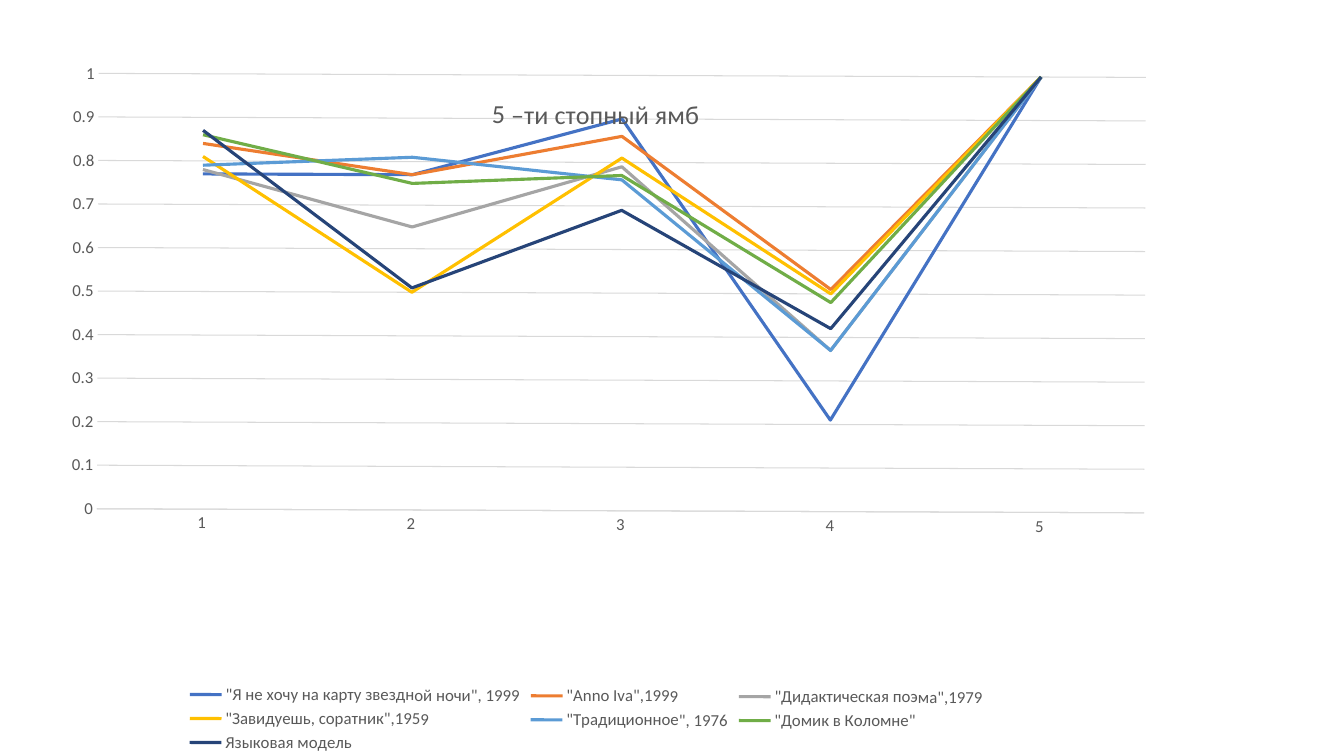
from dataclasses import dataclass

from pptx import Presentation
from pptx.chart.data import CategoryChartData
from pptx.dml.color import RGBColor
from pptx.enum.chart import XL_CHART_TYPE, XL_LEGEND_POSITION, XL_TICK_MARK
from pptx.oxml.ns import qn
from pptx.oxml.xmlchemy import OxmlElement
from pptx.util import Cm, Pt

LINE = XL_CHART_TYPE.LINE
BOTTOM = XL_LEGEND_POSITION.BOTTOM
NO_TICK = XL_TICK_MARK.NONE


@dataclass(frozen=True)
class Theme:
    font: str = "Calibri"
    text: str = "595959"
    grid: str = "D9D9D9"
    label_size: float = 12
    title_size: float = 18.6
    grid_width: float = 0.75
    line_width: float = 2.25
    lines: tuple = ("4472C4", "ED7D31", "A5A5A5", "FFC000", "5B9BD5", "70AD47", "264478")


THEME = Theme()
TITLE = "5 –ти стопный ямб"
FEET = ("1", "2", "3", "4", "5")
POEMS = {
    '"Я не хочу на карту звездной ночи", 1999': (0.77, 0.77, 0.9, 0.21, 1),
    '"Anno Iva",1999': (0.84, 0.77, 0.86, 0.51, 1),
    '"Дидактическая поэма",1979': (0.78, 0.65, 0.79, 0.37, 1),
    '"Завидуешь, соратник",1959': (0.81, 0.5, 0.81, 0.5, 1),
    '"Традиционное", 1976': (0.79, 0.81, 0.76, 0.37, 1),
    '"Домик в Коломне"': (0.86, 0.75, 0.77, 0.48, 1),
    "Языковая модель": (0.87, 0.51, 0.69, 0.42, 1),
}
TILT_DEGREES = 0.22


def set_all(target, values):
    for name, value in values.items():
        setattr(target, name, value)


def style_font(font, size):
    set_all(font, {"name": THEME.font, "size": Pt(size), "bold": False})
    font.color.rgb = RGBColor.from_string(THEME.text)


def style_line(line, color, width):
    line.color.rgb = RGBColor.from_string(color)
    line.width = Pt(width)


def set_layout(parent, position, settings):
    for previous in parent.findall(qn("c:layout")):
        parent.remove(previous)
    layout = OxmlElement("c:layout")
    manual = OxmlElement("c:manualLayout")
    layout.append(manual)
    for tag, value in settings.items():
        setting = OxmlElement(f"c:{tag}")
        setting.set("val", str(value))
        manual.append(setting)
    parent.insert(position, layout)


def style_title(chart):
    chart.has_title = True
    title = chart.chart_title
    title.text_frame.text = TITLE
    style_font(title.text_frame.paragraphs[0].runs[0].font, THEME.title_size)
    element = chart.element.xpath("c:chart/c:title")[0]
    set_layout(element, 1, {"xMode": "edge", "yMode": "edge", "x": 0.41, "y": 0.04})
    for overlay in element.findall(qn("c:overlay")):
        overlay.set("val", "1")


def style_axes(chart):
    feet, stress = chart.category_axis, chart.value_axis
    for axis in (feet, stress):
        set_all(axis, {"major_tick_mark": NO_TICK, "minor_tick_mark": NO_TICK})
        style_font(axis.tick_labels.font, THEME.label_size)
        set_all(axis.tick_labels, {"number_format": "General", "number_format_is_linked": False})
    set_all(stress, {"minimum_scale": 0, "maximum_scale": 1, "major_unit": 0.1,
                     "has_major_gridlines": True})
    stress.format.line.fill.background()
    for line in (feet.format.line, stress.major_gridlines.format.line):
        style_line(line, THEME.grid, THEME.grid_width)


def style_legend(chart):
    chart.has_legend = True
    set_all(chart.legend, {"position": BOTTOM, "include_in_layout": False})
    style_font(chart.legend.font, THEME.label_size)


def add_stress_chart(slide, left, top, width, height):
    data = CategoryChartData(number_format="General")
    data.categories = FEET
    for poem, stresses in POEMS.items():
        data.add_series(poem, stresses)
    frame = slide.shapes.add_chart(LINE, left, top, width, height, data)
    frame.element.xfrm.set("rot", str(round(TILT_DEGREES * 60000)))
    chart = frame.chart
    style_font(chart.font, THEME.label_size)
    style_title(chart)
    style_axes(chart)
    style_legend(chart)
    set_layout(chart.element.xpath("c:chart/c:plotArea")[0], 0, {
        "layoutTarget": "inner", "xMode": "edge", "yMode": "edge",
        "x": 0.064, "y": 0.017, "w": 0.932, "h": 0.627,
    })
    chart.plots[0].vary_by_categories = False
    for poem, color in zip(chart.plots[0].series, THEME.lines):
        poem.smooth = False
        style_line(poem.format.line, color, THEME.line_width)


def main():
    deck = Presentation()
    set_all(deck, {"slide_width": Cm(33.87), "slide_height": Cm(19.05)})
    slide = deck.slides.add_slide(deck.slide_layouts[6])
    add_stress_chart(slide, Cm(0.64), Cm(1.6), Cm(28.32), Cm(17.5))
    deck.save("out.pptx")


if __name__ == "__main__":
    main()
